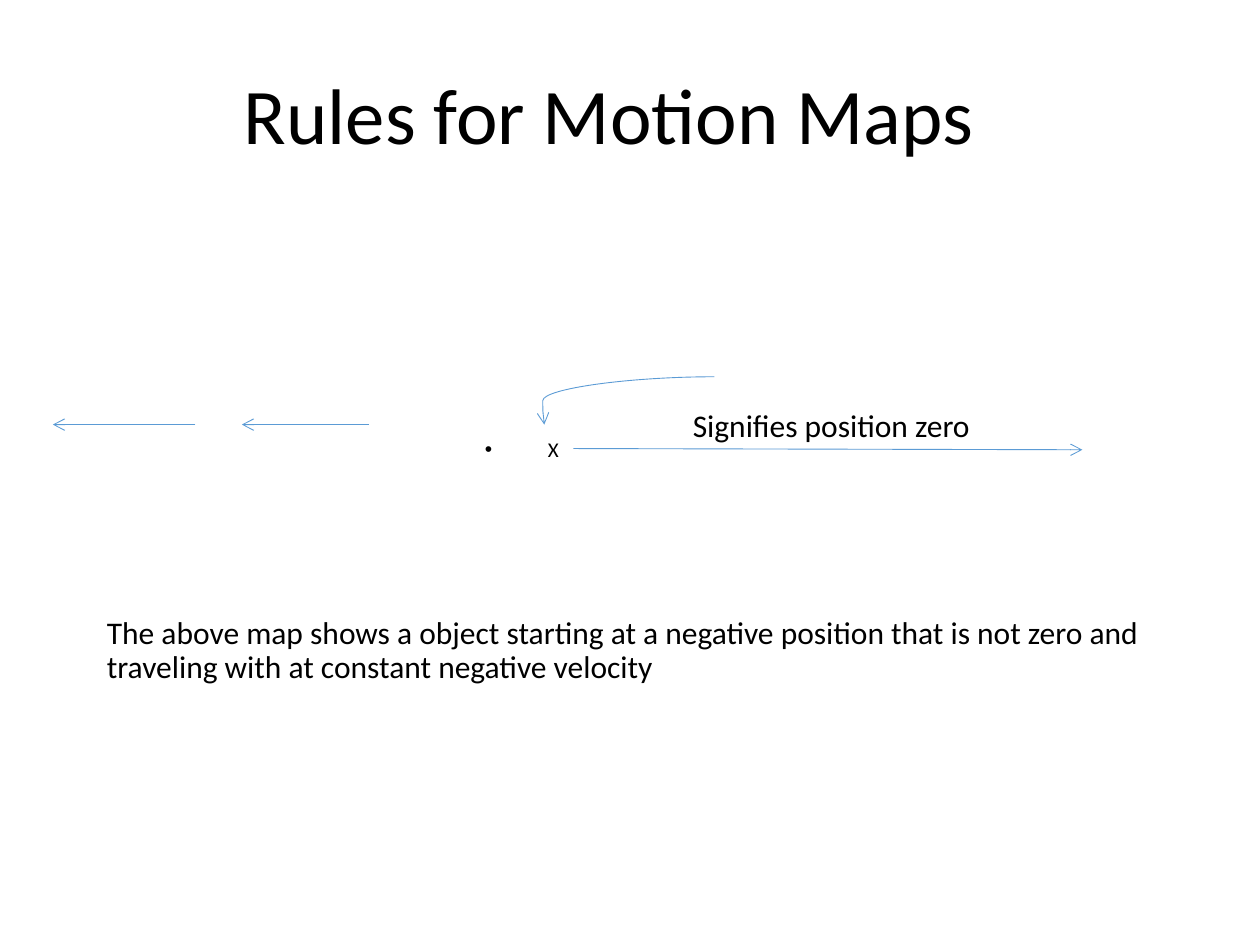
from dataclasses import dataclass

import lxml.etree
import pptx
import pptx.dml.color
import pptx.enum.shapes
import pptx.enum.text
import pptx.oxml.ns
import pptx.util

Inches = pptx.util.Inches
Connector = pptx.enum.shapes.MSO_CONNECTOR
Anchor = pptx.enum.text.MSO_ANCHOR
Align = pptx.enum.text.PP_ALIGN
qualified = pptx.oxml.ns.qn


@dataclass
class Label:
    text: str
    left: float
    top: float
    width: float
    height: float
    size: int = 18
    spacing: float = 0.9
    align: Align = Align.LEFT
    anchor: Anchor = Anchor.TOP
    bullet_indent: float = 0


@dataclass
class Arrow:
    start: tuple[float, float]
    end: tuple[float, float]
    kind: Connector = Connector.STRAIGHT
    bend: int | None = None


LABELS = [
    Label("Rules for Motion Maps", 0.58, 0.33, 8.5, 1, size=45,
          align=Align.CENTER, anchor=Anchor.BOTTOM),
    Label("X", 3.75, 3.44, 1, 0.28, size=12, bullet_indent=0.5),
    Label("The above map shows a object starting at a negative position that is "
          "not zero and traveling with at constant negative velocity",
          0.75, 4.85, 8.83, 0.7),
    Label("Signifies position zero", 5.4, 3.17, 3.42, 0.4, spacing=1),
]
ARROWS = [
    Arrow((2.93, 3.37), (1.92, 3.37)),
    Arrow((1.55, 3.37), (0.42, 3.37)),
    Arrow((4.55, 3.56), (8.59, 3.57)),
    Arrow((5.67, 2.99), (4.32, 3.37), Connector.CURVE, bend=100900),
]


def color(value: str) -> pptx.dml.color.RGBColor:
    return pptx.dml.color.RGBColor.from_string(value)


def apply_format(target: object, values: dict) -> None:
    for name, value in values.items():
        setattr(target, name, value)


def add_label(slide: pptx.slide.Slide, label: Label) -> None:
    shape = slide.shapes.add_textbox(
        *map(Inches, (label.left, label.top, label.width, label.height)))
    apply_format(shape.text_frame, {"word_wrap": True, "vertical_anchor": label.anchor})
    paragraph = shape.text_frame.paragraphs[0]
    apply_format(paragraph, {"text": label.text, "alignment": label.align,
                             "line_spacing": label.spacing})
    if label.bullet_indent:
        properties = paragraph._p.get_or_add_pPr()
        indent = Inches(label.bullet_indent)
        properties.set("marL", str(indent))
        properties.set("indent", str(-indent))
        lxml.etree.SubElement(properties, qualified("a:buFont"), typeface="Arial")
        lxml.etree.SubElement(properties, qualified("a:buChar"), char="•")
    font = paragraph.runs[0].font
    apply_format(font, {"name": "Calibri", "size": pptx.util.Pt(label.size)})
    font.color.rgb = color("000000")


def add_arrow(slide: pptx.slide.Slide, arrow: Arrow) -> None:
    connector = slide.shapes.add_connector(
        arrow.kind, *map(Inches, (*arrow.start, *arrow.end)))
    connector.line.width = pptx.util.Pt(0.5)
    connector.line.color.rgb = color("5B9BD5")
    properties = connector._element.spPr
    line = properties.find(qualified("a:ln"))
    lxml.etree.SubElement(line, qualified("a:tailEnd"), type="arrow")
    lxml.etree.SubElement(properties, qualified("a:effectLst"))
    if arrow.bend is not None:
        geometry = properties.find(qualified("a:prstGeom"))
        adjustments = geometry.find(qualified("a:avLst"))
        lxml.etree.SubElement(adjustments, qualified("a:gd"),
                              name="adj1", fmla=f"val {arrow.bend}")


def main() -> None:
    """Build the motion map slide and save it."""
    presentation = pptx.Presentation()
    apply_format(presentation, {"slide_width": Inches(10), "slide_height": Inches(7.5)})
    slide = presentation.slides.add_slide(presentation.slide_layouts[6])
    for label in LABELS:
        add_label(slide, label)
    for arrow in ARROWS:
        add_arrow(slide, arrow)
    presentation.save("out.pptx")


if __name__ == "__main__":
    main()
